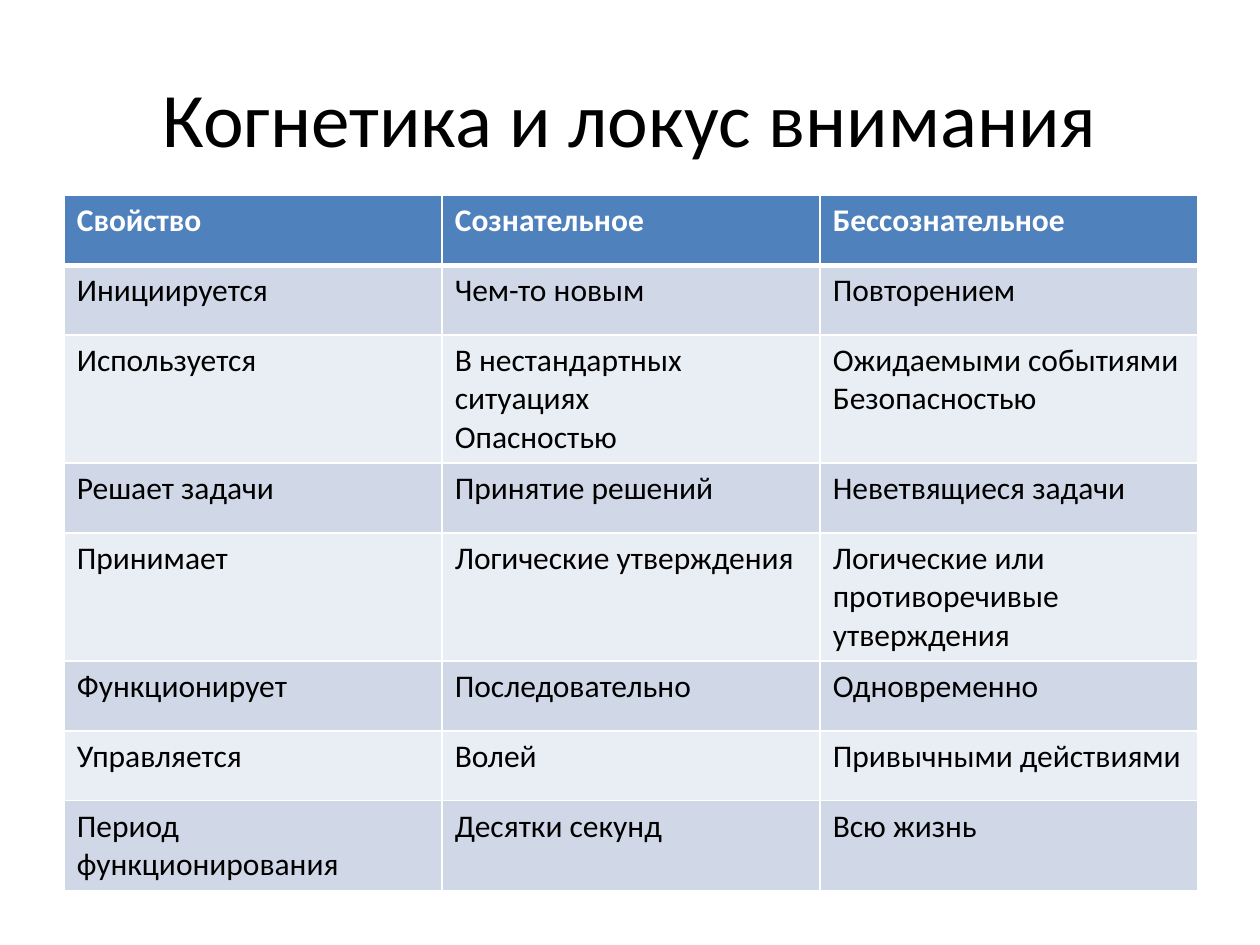
from pptx import Presentation
from pptx.dml.color import RGBColor
from pptx.enum.text import MSO_ANCHOR, PP_ALIGN
from pptx.oxml import parse_xml
from pptx.oxml.ns import nsdecls
from pptx.util import Inches, Pt

FONT = "Calibri"
BLACK, WHITE = "000000", "FFFFFF"
HEADER_FILL = "4F81BD"
BAND_FILLS = ("E9EDF4", "D0D8E8")

TITLE = "Когнетика и локус внимания"
ROWS = [
    ("Свойство", "Сознательное", "Бессознательное"),
    ("Инициируется", "Чем-то новым", "Повторением"),
    ("Используется", "В нестандартных ситуациях\nОпасностью",
     "Ожидаемыми событиями\nБезопасностью"),
    ("Решает задачи", "Принятие решений", "Неветвящиеся задачи"),
    ("Принимает", "Логические утверждения",
     "Логические или противоречивые утверждения"),
    ("Функционирует", "Последовательно", "Одновременно"),
    ("Управляется", "Волей", "Привычными действиями"),
    ("Период функционирования", "Десятки секунд", "Всю жизнь"),
]


def rgb(color):
    return RGBColor.from_string(color)


def add_run(p, text, size, color, bold=False):
    r = p.add_run()
    r.text = text
    r.font.name, r.font.size, r.font.bold = FONT, Pt(size), bold
    r.font.color.rgb = rgb(color)


def set_borders(cell, widths):
    """Draw white borders; widths maps a side (L, R, T, B, in that order) to points."""
    tc_pr = cell._tc.get_or_add_tcPr()
    for side, width in widths.items():
        tc_pr.append(parse_xml(
            f'<a:ln{side} {nsdecls("a")} w="{Pt(width)}"><a:solidFill>'
            f'<a:srgbClr val="{WHITE}"/></a:solidFill></a:ln{side}>'))


def fill_cell(cell, text, row):
    header = row == 0
    set_borders(cell, {"L": 1, "R": 1, "T": 3 if row == 1 else 1, "B": 3 if header else 1})
    cell.fill.solid()
    cell.fill.fore_color.rgb = rgb(HEADER_FILL if header else BAND_FILLS[row % 2])
    tf = cell.text_frame
    for i, line in enumerate(text.split("\n")):
        p = tf.add_paragraph() if i else tf.paragraphs[0]
        add_run(p, line, 18, WHITE if header else BLACK, header)


def place_title(slide, left, top, width, height):
    sp = slide.shapes.title
    sp.left, sp.top, sp.width, sp.height = left, top, width, height
    tf = sp.text_frame
    tf.vertical_anchor = MSO_ANCHOR.MIDDLE
    p = tf.paragraphs[0]
    p.alignment = PP_ALIGN.CENTER
    add_run(p, TITLE, 44, BLACK)


def add_comparison_table(slide, left, top, width, height):
    table = slide.shapes.add_table(
        len(ROWS), len(ROWS[0]), left, top, width, height).table
    for row, texts in enumerate(ROWS):
        for col, text in enumerate(texts):
            fill_cell(table.cell(row, col), text, row)


def main():
    prs = Presentation()
    prs.slide_width, prs.slide_height = Inches(10), Inches(7.5)
    slide = prs.slides.add_slide(prs.slide_layouts[5])
    place_title(slide, Inches(0.5), Inches(0.3), Inches(9), Inches(1.25))
    add_comparison_table(slide, Inches(0.51), Inches(1.55), Inches(9), Inches(4.44))
    prs.save("out.pptx")


if __name__ == "__main__":
    main()
